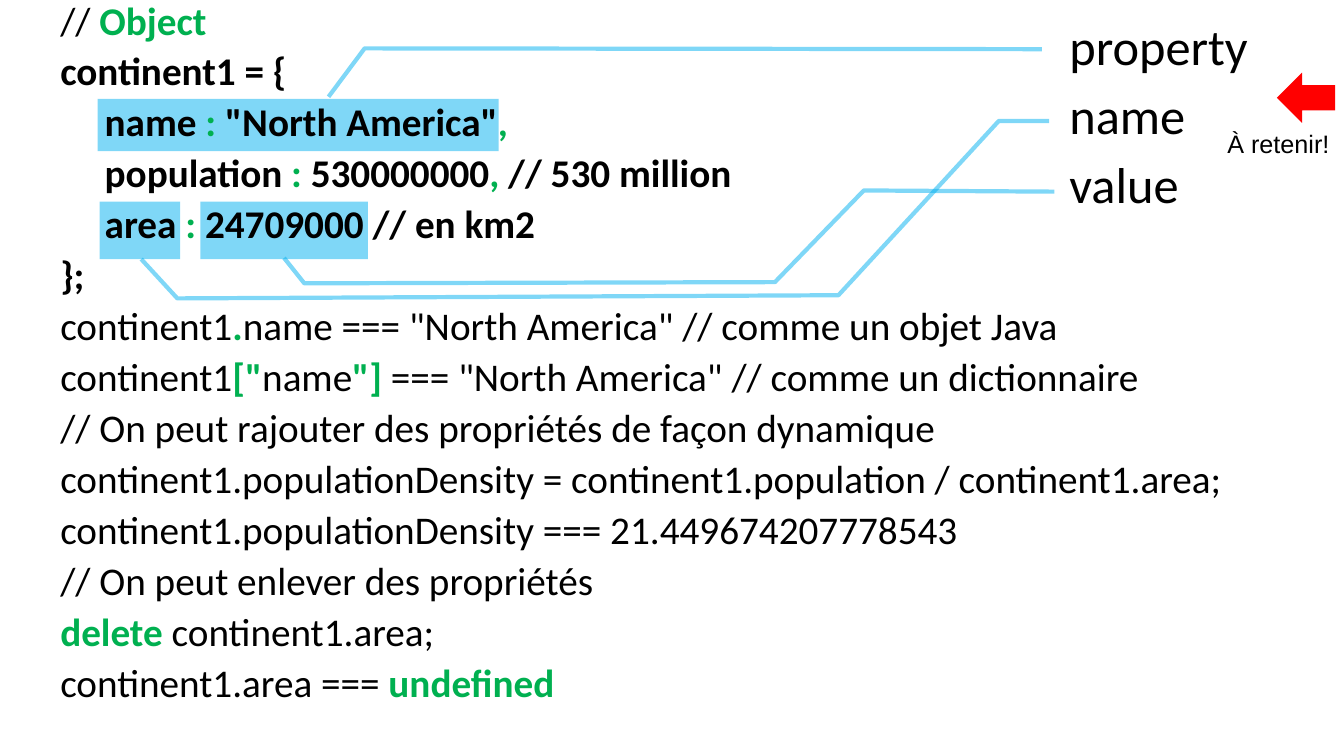
import pptx
import pptx.util
import pptx.dml.color
import pptx.enum.shapes
import pptx.enum.text
import pptx.oxml.ns
import lxml.etree

Cm = pptx.util.Cm
Pt = pptx.util.Pt
KIND = pptx.enum.shapes.MSO_SHAPE
HUES = {"ink": "000000", "green": "00B050", "blue": "00B0F0", "red": "FF0000"}

CODE = [
    (0, False, "// |Object"),
    (0, True, "continent1 = {"),
    (1.12, True, 'name |:| "North America"|,'),
    (1.12, True, "population |:| 530000000|,| // 530 million"),
    (1.12, True, "area |:| 24709000 // en km2"),
    (0, True, "};"),
    (0, False, 'continent1|.|name === "North America" // comme un objet Java'),
    (0, False, 'continent1|["|name|"]| === "North America" // comme un dictionnaire'),
    (0, False, "// On peut rajouter des propriétés de façon dynamique"),
    (0, False, "continent1.populationDensity = continent1.population / continent1.area;"),
    (0, False, "continent1.populationDensity === 21.449674207778543"),
    (0, False, "// On peut enlever des propriétés"),
    (0, False, "|delete| continent1.area;"),
    (0, False, "continent1.area === |undefined"),
]
MARKS = [(2.46, 2.49, 10.11, 1.32), (2.51, 5.08, 2.03, 1.45), (5.05, 5.08, 4.22, 1.45)]
LINKS = [
    [(8.28, 2.44), (9.19, 1.22), (26.26, 1.24)],
    [(7.16, 6.5), (7.67, 7.14), (19.53, 7.11), (21.77, 4.8), (26.57, 4.83)],
    [(3.56, 6.53), (4.47, 7.52), (21.13, 7.44), (25.17, 3.05), (26.44, 3.05)],
]


def tint(fill, hue):
    """Give a fill one solid colour."""
    fill.solid()
    fill.fore_color.rgb = pptx.dml.color.RGBColor.from_string(HUES[hue])


def fade(shape):
    """Make every colour of a shape half clear."""
    for node in shape.element.spPr.iter(pptx.oxml.ns.qn("a:srgbClr")):
        lxml.etree.SubElement(node, pptx.oxml.ns.qn("a:alpha"), val="50000")


def block(slide, kind, box, hue):
    """Add a plain filled shape."""
    shape = slide.shapes.add_shape(kind, *map(Cm, box))
    shape.shadow.inherit = False
    tint(shape.fill, hue)
    shape.line.fill.background()
    return shape


def label(slide, box, text, face, size):
    """Add one line of text."""
    frame = slide.shapes.add_textbox(*map(Cm, box)).text_frame
    frame.word_wrap = True
    para = frame.paragraphs[0]
    para.text = text
    para.font.name, para.font.size = face, Pt(size)
    tint(para.font.fill, "ink")


def marks(slide, box):
    """Shade the code parts and draw the lines that lead to their names."""
    left, top = box[:2]
    for x, y, wide, high in MARKS:
        fade(block(slide, KIND.RECTANGLE, (left + x, top + y, wide, high), "blue"))
    for link in LINKS:
        dots = [(Cm(left + x), Cm(top + y)) for x, y in link]
        form = slide.shapes.build_freeform(*dots[0])
        form.add_line_segments(dots[1:], close=False)
        line = form.convert_to_shape()
        line.shadow.inherit = False
        line.fill.background()
        tint(line.line.fill, "blue")
        line.line.width = Pt(3)
        fade(line)


def terms(slide, box):
    """Stack the three terms."""
    left, top, wide, high = box
    for row, term in enumerate(("property", "name", "value")):
        label(slide, (left, top + row * 1.74, wide, high), term, "Calibri", 36)


def code(slide, box):
    """Write the code, with every second part of a row in green."""
    frame = slide.shapes.add_textbox(*map(Cm, box)).text_frame
    frame.word_wrap = True
    for row, (indent, bold, text) in enumerate(CODE):
        para = frame.add_paragraph() if row else frame.paragraphs[0]
        para.line_spacing = 0.8
        para.space_before = Pt(9.5 if row else 0)
        para.font.name, para.font.size = "Calibri", Pt(28)
        if indent:
            para._p.get_or_add_pPr().set("marL", str(Cm(indent)))
        for turn, part in enumerate(text.split("|")):
            if part:
                run = para.add_run()
                run.text = part
                run.font.bold = bold or turn % 2 == 1
                tint(run.font.fill, "green" if turn % 2 else "ink")


def hint(slide, box):
    """Add the red arrow with its caption below."""
    left, top, wide, high = box
    block(slide, KIND.LEFT_ARROW, (left + 1.5, top, 1.47, 1.27), "red")
    label(slide, (left, top + 1.27, wide, high - 1.27), "À retenir!", "Arial", 18)


def main():
    """Build and save the slide."""
    deck = pptx.Presentation()
    deck.slide_width, deck.slide_height = Cm(33.87), Cm(19.05)
    slide = deck.slides.add_slide(deck.slide_layouts[6])
    marks(slide, (0, 0, 33.87, 19.05))
    terms(slide, (26.7, 0.25, 5.61, 1.8))
    code(slide, (1.27, 0, 31.32, 19.05))
    hint(slide, (30.68, 1.83, 3.18, 2.29))
    deck.save("out.pptx")


if __name__ == "__main__":
    main()
